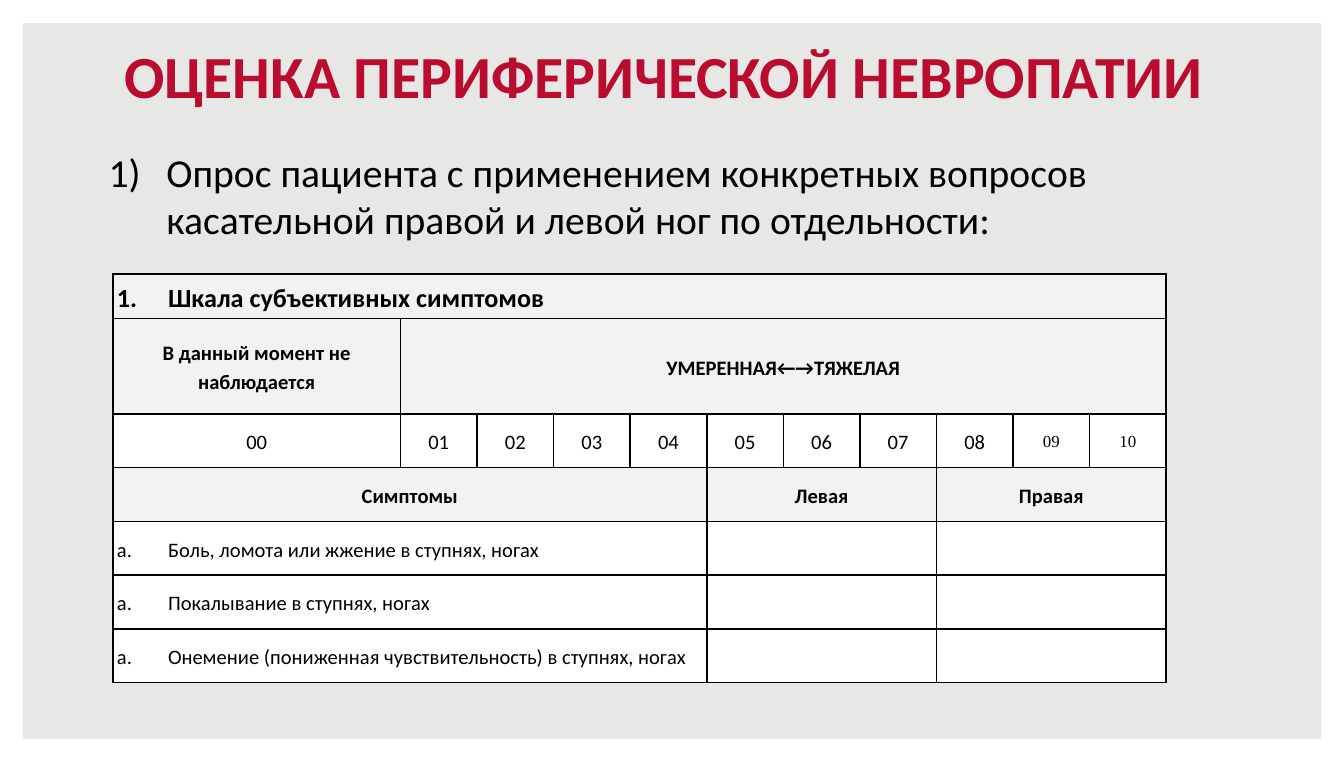
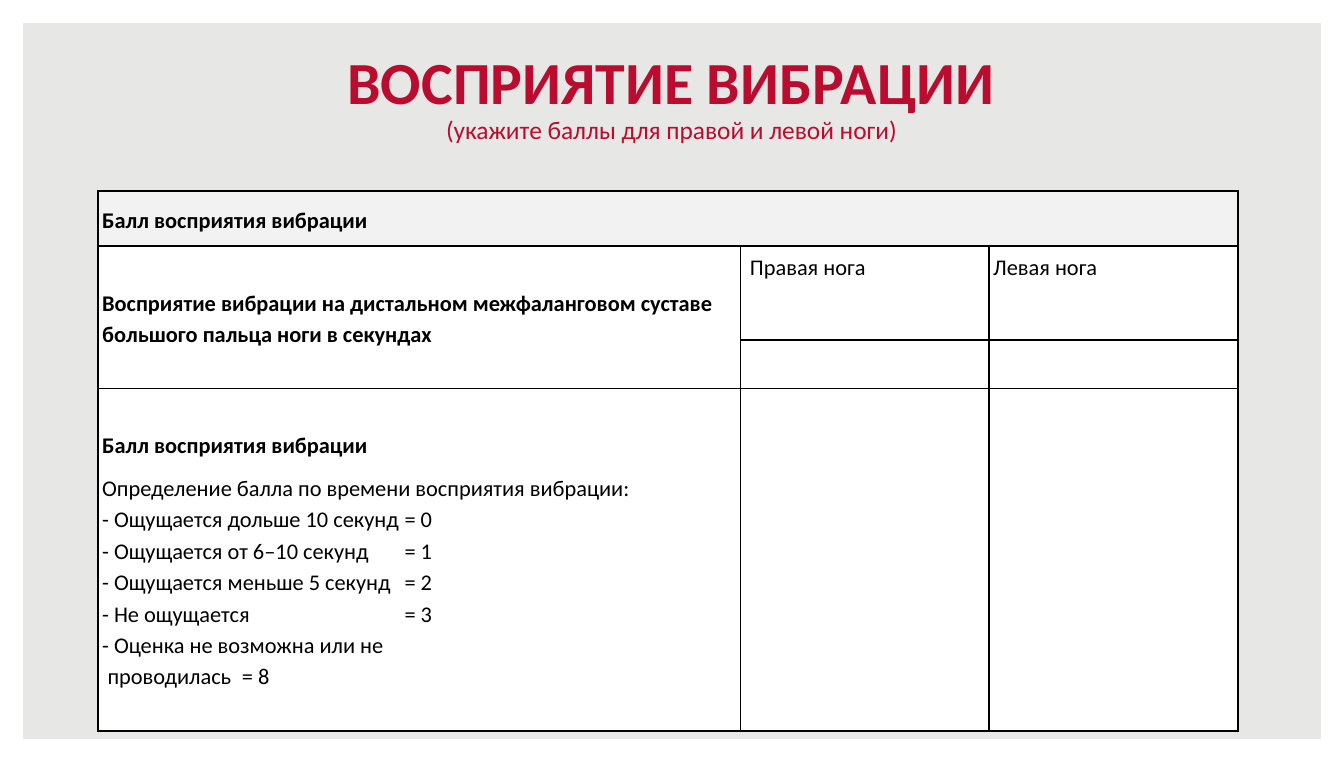
from dataclasses import dataclass

from lxml import etree
from pptx import Presentation
from pptx.dml.color import RGBColor
from pptx.enum.shapes import MSO_SHAPE
from pptx.enum.text import MSO_ANCHOR, MSO_AUTO_SIZE, PP_ALIGN
from pptx.oxml.ns import qn
from pptx.util import Inches, Pt

FRAME = MSO_SHAPE.FRAME
LEFT, CENTER = PP_ALIGN.LEFT, PP_ALIGN.CENTER
TOP, MIDDLE, BOTTOM = MSO_ANCHOR.TOP, MSO_ANCHOR.MIDDLE, MSO_ANCHOR.BOTTOM
NO_AUTOFIT = MSO_AUTO_SIZE.NONE
TITLE_ONLY = 5


@dataclass(frozen=True)
class Theme:
    """Colours, fonts and type sizes shared by the slides."""

    background: RGBColor = RGBColor(0xE7, 0xE7, 0xE5)
    white: RGBColor = RGBColor(0xFF, 0xFF, 0xFF)
    header: RGBColor = RGBColor(0xF2, 0xF2, 0xF2)
    text: RGBColor = RGBColor(0, 0, 0)
    accent: RGBColor = RGBColor(0xBA, 0x0C, 0x2F)
    font: str = "Calibri"
    serif: str = "Times New Roman"
    title: float = 32
    subtitle: float = 13.6
    body: float = 21.2
    scale_heading: float = 14
    score: float = 12
    symptom: float = 11
    small: float = 9


THEME = Theme()


def style_font(font, size, color=THEME.text, bold=False, name=THEME.font):
    """Set the look of a paragraph or run font."""
    font.name, font.size, font.bold = name, Pt(size), bold
    font.color.rgb = color


def add_before_font(paragraph, tag, **attributes):
    """Add a paragraph property in front of its default font."""
    element = etree.Element(qn(tag), attributes)
    properties = paragraph._p.get_or_add_pPr()
    properties.find(qn("a:defRPr")).addprevious(element)
    return element


def indent(paragraph, left, first=0.0):
    """Indent a paragraph and its first line, in inches."""
    properties = paragraph._p.get_or_add_pPr()
    properties.set("marL", str(Inches(left)))
    properties.set("indent", str(Inches(first)))


def number(paragraph, scheme, hanging):
    """Number a paragraph automatically with a hanging indent."""
    indent(paragraph, hanging, -hanging)
    add_before_font(paragraph, "a:buFont", typeface="+mj-lt")
    add_before_font(paragraph, "a:buAutoNum", type=scheme)


def add_tab_stop(paragraph, position):
    """Place one left tab stop, in inches."""
    tabs = add_before_font(paragraph, "a:tabLst")
    etree.SubElement(tabs, qn("a:tab"), pos=str(Inches(position)), algn="l")


def add_titled_slide(presentation, title, box, subtitle=None):
    """Add a framed slide with a centred title and optional subtitle."""
    slide = presentation.slides.add_slide(presentation.slide_layouts[TITLE_ONLY])
    frame = slide.shapes.add_shape(
        FRAME, 0, 0, presentation.slide_width, presentation.slide_height
    )
    frame.adjustments[0] = 0.03
    frame.shadow.inherit = False
    frame.fill.solid()
    frame.fill.fore_color.rgb = THEME.white
    frame.line.fill.background()

    shape = slide.shapes.title
    shape.left, shape.top, shape.width, shape.height = map(Inches, box)
    text_frame = shape.text_frame
    text_frame.auto_size = NO_AUTOFIT
    text_frame.vertical_anchor = BOTTOM
    text_frame.margin_bottom = Inches(0.03)
    paragraph = text_frame.paragraphs[0]
    paragraph.alignment = CENTER
    paragraph.line_spacing = 0.9
    run = paragraph.add_run()
    run.text = title
    style_font(run.font, THEME.title, THEME.accent, bold=True)
    if subtitle:
        paragraph.add_line_break()
        run = paragraph.add_run()
        run.text = subtitle
        style_font(run.font, THEME.subtitle, THEME.accent)
    return slide


def add_numbered_text(slide, text, box):
    """Add a text box with one numbered paragraph."""
    text_frame = slide.shapes.add_textbox(*map(Inches, box)).text_frame
    text_frame.word_wrap = True
    paragraph = text_frame.paragraphs[0]
    paragraph.text = text
    style_font(paragraph.font, THEME.body)
    number(paragraph, "arabicParenR", 0.43)


def draw_borders(cell):
    """Draw a thin dark line on every side of a cell."""
    properties = cell._tc.get_or_add_tcPr()
    for side in ("a:lnL", "a:lnR", "a:lnT", "a:lnB"):
        line = etree.SubElement(properties, qn(side), w=str(Pt(1)))
        fill = etree.SubElement(line, qn("a:solidFill"))
        etree.SubElement(fill, qn("a:srgbClr"), val=str(THEME.text))


def paint(cell, color):
    """Fill a cell with one colour."""
    cell.fill.solid()
    cell.fill.fore_color.rgb = color


def add_grid(slide, left, top, widths, heights):
    """Add an empty white table with borders."""
    table = slide.shapes.add_table(
        len(heights), len(widths), Inches(left), Inches(top),
        Inches(sum(widths)), Inches(sum(heights)),
    ).table
    table.first_row = table.horz_banding = False
    for column, width in zip(table.columns, widths):
        column.width = Inches(width)
    for row, height in zip(table.rows, heights):
        row.height = Inches(height)
    for cell in table.iter_cells():
        cell.margin_left = cell.margin_right = Inches(0.03)
        cell.margin_top = cell.margin_bottom = Inches(0.03)
        cell.vertical_anchor = MIDDLE
        style_font(cell.text_frame.paragraphs[0].font, THEME.symptom)
        draw_borders(cell)
        paint(cell, THEME.white)
    return table


def write_cell(cell, text, size, bold=False, align=LEFT, name=THEME.font,
               header=False, scheme=None):
    """Write text into a cell, one paragraph a line, and return the paragraphs."""
    cell.text = text
    if header:
        paint(cell, THEME.header)
    for paragraph in cell.text_frame.paragraphs:
        paragraph.alignment = align
        paragraph.line_spacing = 1.15
        style_font(paragraph.font, size, bold=bold, name=name)
        if scheme:
            number(paragraph, scheme, 0.38)
    return cell.text_frame.paragraphs


def merge(table, row, first, last, last_row=None):
    """Merge a block of cells and return its first cell."""
    cell = table.cell(row, first)
    cell.merge(table.cell(last_row or row, last))
    return cell


def add_symptom_table(slide):
    """Add the scale of subjective symptoms."""
    table = add_grid(slide, 0.84, 2.04, [2.14] + [0.57] * 10,
                     [0.33, 0.71] + [0.4] * 5)
    write_cell(merge(table, 0, 0, 10), "Шкала субъективных симптомов",
               THEME.scale_heading, bold=True, header=True, scheme="arabicPeriod")

    headings = (
        (table.cell(1, 0), "В данный момент не наблюдается"),
        (merge(table, 1, 1, 10), "УМЕРЕННАЯ←→ТЯЖЕЛАЯ"),
        (merge(table, 3, 0, 4), "Симптомы"),
        (merge(table, 3, 5, 7), "Левая"),
        (merge(table, 3, 8, 10), "Правая"),
    )
    for cell, text in headings:
        write_cell(cell, text, THEME.symptom, bold=True, align=CENTER, header=True)

    for score in range(11):
        size, name = (
            (THEME.symptom, THEME.font) if score < 9 else (THEME.small, THEME.serif)
        )
        write_cell(table.cell(2, score), f"{score:02}", size, align=CENTER, name=name)

    symptoms = (
        "Боль, ломота или жжение в ступнях, ногах",
        "Покалывание в ступнях, ногах",
        "Онемение (пониженная чувствительность) в ступнях, ногах",
    )
    for row, symptom in enumerate(symptoms, start=4):
        write_cell(merge(table, row, 0, 4), symptom, THEME.symptom,
                   scheme="alphaLcPeriod")
        merge(table, row, 5, 7)
        merge(table, row, 8, 10)


def add_vibration_table(slide):
    """Add the vibration perception score sheet."""
    table = add_grid(slide, 0.73, 1.42, [4.78, 1.85, 1.85], [0.41, 0.7, 0.36, 2.55])
    write_cell(merge(table, 0, 0, 2), "Балл восприятия вибрации", THEME.score,
               bold=True, header=True)
    write_cell(
        merge(table, 1, 0, 0, last_row=2),
        "Восприятие вибрации на дистальном межфаланговом суставе "
        "большого пальца ноги в секундах",
        THEME.score, bold=True,
    )
    for column, leg, offset in ((1, "Правая нога", 0.04), (2, "Левая нога", 0)):
        cell = table.cell(1, column)
        cell.vertical_anchor = TOP
        indent(write_cell(cell, leg, THEME.score)[0], offset)

    lines = (
        "Балл восприятия вибрации",
        "Определение балла по времени восприятия вибрации:",
        "- Ощущается дольше 10 секунд\t= 0",
        "- Ощущается от 6–10 секунд\t= 1",
        "- Ощущается меньше 5 секунд\t= 2",
        "- Не ощущается\t= 3",
        "- Оценка не возможна или не",
        "проводилась\t= 8",
    )
    paragraphs = write_cell(table.cell(3, 0), "\n".join(lines), THEME.score)
    paragraphs[0].font.bold = True
    paragraphs[0].space_after = Pt(6)
    for paragraph in paragraphs[2:]:
        add_tab_stop(paragraph, 2.25)
    indent(paragraphs[-1], 0.04)


def main():
    """Build and save the presentation."""
    presentation = Presentation()
    presentation.slide_width, presentation.slide_height = Inches(10), Inches(5.67)
    background = presentation.slide_master.background.fill
    background.solid()
    background.fore_color.rgb = THEME.background

    survey = add_titled_slide(
        presentation, "ОЦЕНКА ПЕРИФЕРИЧЕСКОЙ НЕВРОПАТИИ", (0.2, 0.36, 9.48, 0.5)
    )
    add_numbered_text(
        survey,
        "Опрос пациента с применением конкретных вопросов "
        "касательной правой и левой ног по отдельности:",
        (0.71, 1.05, 8.61, 0.9),
    )
    add_symptom_table(survey)

    vibration = add_titled_slide(
        presentation, "ВОСПРИЯТИЕ ВИБРАЦИИ", (0.45, 0.61, 9.09, 0.5),
        subtitle="(укажите баллы для правой и левой ноги)",
    )
    add_vibration_table(vibration)
    presentation.save("out.pptx")


if __name__ == "__main__":
    main()
